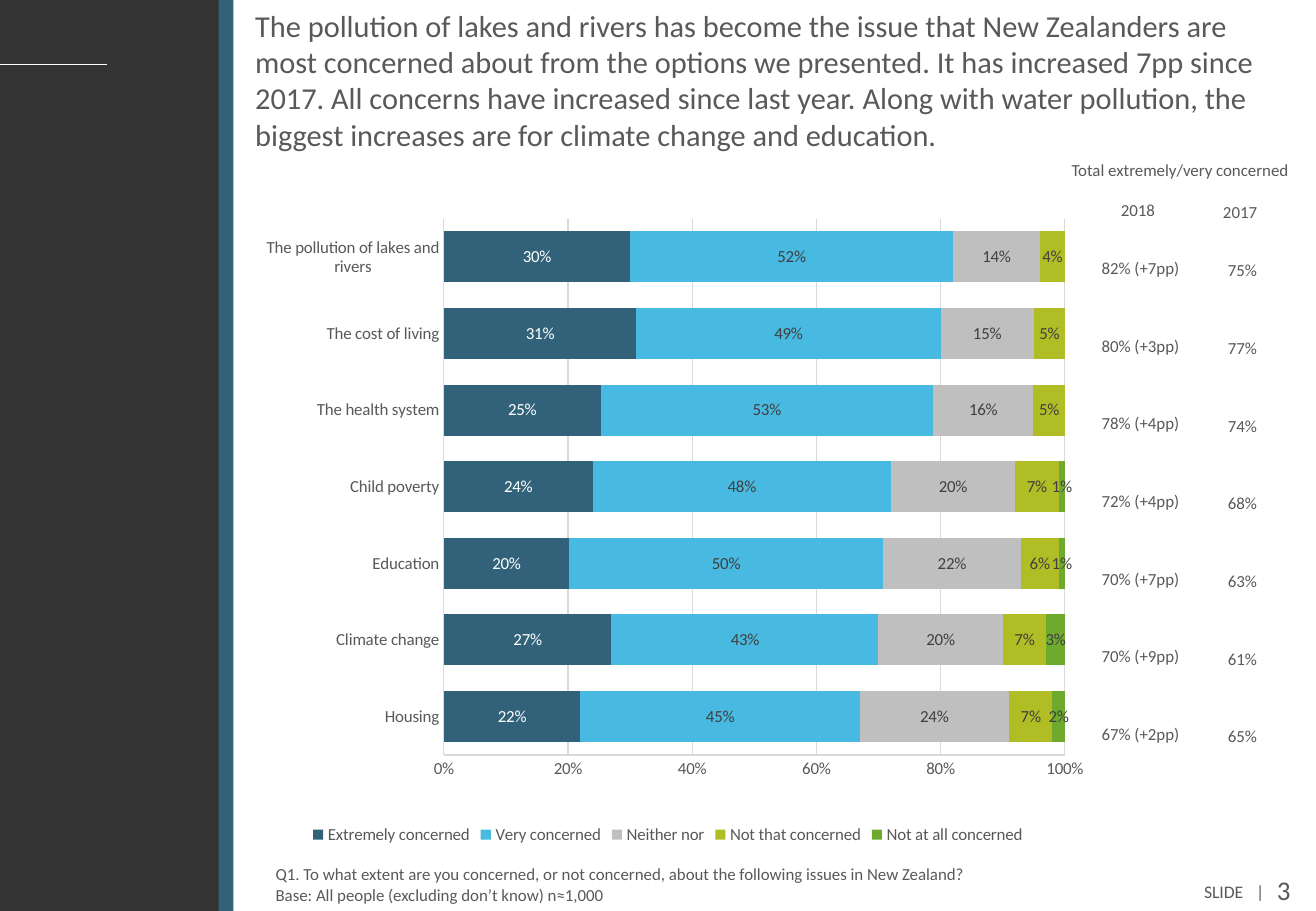
import pptx
import pptx.chart.data
import pptx.dml.color
import pptx.enum.chart
import pptx.enum.shapes
import pptx.enum.text
import pptx.util
from lxml import etree
from pptx.util import Inches

FONT = "Calibri"
GREY = "595959"
RULE = "D9D9D9"
BLUE = "326279"
ALIGN = pptx.enum.text.PP_ALIGN
ANCHOR = pptx.enum.text.MSO_ANCHOR
C = "{http://schemas.openxmlformats.org/drawingml/2006/chart}"
A = "{http://schemas.openxmlformats.org/drawingml/2006/main}"

ISSUES = [
    ("The pollution of lakes and rivers", (0.30, 0.52, 0.14, 0.04, None), "82% (+7pp)", "75%"),
    ("The cost of living", (0.31, 0.49, 0.15, 0.05, None), "80% (+3pp)", "77%"),
    ("The health system", (0.25, 0.53, 0.16, 0.05, None), "78% (+4pp)", "74%"),
    ("Child poverty", (0.24, 0.48, 0.20, 0.07, 0.01), "72% (+4pp)", "68%"),
    ("Education", (0.20, 0.50, 0.22, 0.06, 0.01), "70% (+7pp)", "63%"),
    ("Climate change", (0.27, 0.43, 0.20, 0.07, 0.03), "70% (+9pp)", "61%"),
    ("Housing", (0.22, 0.45, 0.24, 0.07, 0.02), "67% (+2pp)", "65%"),
]
LEVELS = [
    ("Extremely concerned", BLUE, "FFFFFF"),
    ("Very concerned", "48B9E1", "404040"),
    ("Neither nor", "BFBFBF", "404040"),
    ("Not that concerned", "B1BD25", "404040"),
    ("Not at all concerned", "6EAA2E", "404040"),
]


def rgb(value):
    return pptx.dml.color.RGBColor.from_string(value)


def style_font(font, size=10, color=GREY):
    font.name = FONT
    font.size = pptx.util.Pt(size)
    font.color.rgb = rgb(color)


def style_line(line, color):
    line.color.rgb = rgb(color)
    line.width = pptx.util.Pt(0.75)


def write(tf, text, size=10, color=GREY, align=ALIGN.LEFT, anchor=ANCHOR.TOP,
          spacing=None, tab=None):
    tf.word_wrap = True
    tf.auto_size = pptx.enum.text.MSO_AUTO_SIZE.NONE
    tf.vertical_anchor = anchor
    for i, line in enumerate(text.split("\n")):
        p = tf.add_paragraph() if i else tf.paragraphs[0]
        if tab:
            tabs = etree.SubElement(p._p.get_or_add_pPr(), A + "tabLst")
            etree.SubElement(tabs, A + "tab", pos=str(Inches(tab)), algn="l")
        p.alignment = align
        if spacing:
            p.line_spacing = pptx.util.Pt(spacing)
        r = p.add_run()
        r.text = line
        style_font(r.font, size, color)


def add_text(s, x, y, w, h, text, **fmt):
    sp = s.shapes.add_textbox(Inches(x), Inches(y), Inches(w), Inches(h))
    write(sp.text_frame, text, **fmt)


def add_block(s, x, y, w, h, color):
    sp = s.shapes.add_shape(pptx.enum.shapes.MSO_SHAPE.RECTANGLE,
                            Inches(x), Inches(y), Inches(w), Inches(h))
    sp.shadow.inherit = False
    sp.fill.solid()
    sp.fill.fore_color.rgb = rgb(color)
    sp.line.fill.background()


def add_sidebar(s, x, y, w, h):
    add_block(s, x, y, w - 0.11, h, "333333")
    add_block(s, x + w - 0.12, y, 0.12, h, BLUE)
    line = s.shapes.add_connector(pptx.enum.shapes.MSO_CONNECTOR.STRAIGHT,
                                  Inches(x), Inches(y + 0.53), Inches(x + 0.88), Inches(y + 0.53))
    style_line(line.line, "FFFFFF")
    etree.SubElement(line._element.spPr, A + "effectLst")


def add_title(s, x, y, w, h, text):
    sp = s.shapes.title
    sp.left, sp.top, sp.width, sp.height = map(Inches, (x, y, w, h))
    write(sp.text_frame, text, size=18, anchor=ANCHOR.MIDDLE)


def set_plot_area(chart, x, y, w, h):
    area = chart._chartSpace.find(f".//{C}plotArea")
    for old in area.findall(C + "layout"):
        area.remove(old)
    layout = etree.Element(C + "layout")
    manual = etree.SubElement(layout, C + "manualLayout")
    for tag, value in (("layoutTarget", "inner"), ("xMode", "edge"), ("yMode", "edge"),
                       ("x", x), ("y", y), ("w", w), ("h", h)):
        etree.SubElement(manual, C + tag, val=str(value))
    area.insert(0, layout)


def add_concern_chart(s, x, y, w, h):
    rows = ISSUES[::-1]
    data = pptx.chart.data.CategoryChartData(number_format="0%")
    data.categories = [row[0] for row in rows]
    for i, level in enumerate(LEVELS):
        data.add_series(level[0], [row[1][i] for row in rows])
    chart = s.shapes.add_chart(pptx.enum.chart.XL_CHART_TYPE.BAR_STACKED_100,
                               Inches(x), Inches(y), Inches(w), Inches(h), data).chart
    style_font(chart.font)
    chart.has_title = False
    chart.has_legend = True
    chart.legend.position = pptx.enum.chart.XL_LEGEND_POSITION.BOTTOM
    chart.legend.include_in_layout = False
    style_font(chart.legend.font)
    for axis in (chart.category_axis, chart.value_axis):
        axis.major_tick_mark = axis.minor_tick_mark = pptx.enum.chart.XL_TICK_MARK.NONE
        style_font(axis.tick_labels.font)
        style_line(axis.format.line, RULE)
    axis = chart.value_axis
    axis.minimum_scale, axis.maximum_scale, axis.major_unit = 0, 1, 0.2
    axis.tick_labels.number_format = "0%"
    axis.tick_labels.number_format_is_linked = False
    axis.has_major_gridlines = True
    style_line(axis.major_gridlines.format.line, RULE)
    plot = chart.plots[0]
    plot.gap_width, plot.overlap, plot.vary_by_categories = 50, 100, False
    for series, (_, color, label_color) in zip(plot.series, LEVELS):
        series.format.fill.solid()
        series.format.fill.fore_color.rgb = rgb(color)
        labels = series.data_labels
        labels.show_value = True
        labels.number_format = "0%"
        labels.number_format_is_linked = False
        style_font(labels.font, color=label_color)
    set_plot_area(chart, 0.238, 0.028, 0.727, 0.827)


def add_totals(s, x, y, w):
    centred = dict(align=ALIGN.CENTER, anchor=ANCHOR.MIDDLE)
    add_text(s, x, y, w, 0.27, "Total extremely/very concerned", **centred)
    for year, column, dx, dy in (("2018", 2, 0.24, 0.34), ("2017", 3, 1.08, 0.36)):
        add_text(s, x + dx + 0.08, y + dy - 0.01, 0.93, 0.27, year, **centred)
        add_text(s, x + dx, y + dy, 1.13, 4.59, "\n".join(row[column] for row in ISSUES),
                 align=ALIGN.CENTER, spacing=46)


def add_footer(s, x, y, w, h):
    add_text(s, x, y, w, h,
             "Q1. To what extent are you concerned, or not concerned, about the following issues in New Zealand?\n"
             "Base: All people (excluding don’t know) n≈1,000", anchor=ANCHOR.MIDDLE)
    add_text(s, x + 7.64, y + 0.14, 0.75, 0.28, "SLIDE\t|", size=10.5, tab=0.43)
    add_text(s, x + 8.24, y + 0.08, 0.35, 0.37, "3", size=16)


def main():
    prs = pptx.Presentation()
    prs.slide_width, prs.slide_height = Inches(10.83), Inches(7.5)
    s = prs.slides.add_slide(prs.slide_layouts[5])
    add_sidebar(s, 0, 0, 1.92, 7.5)
    add_title(s, 2, 0, 8.5, 1.31,
              "The pollution of lakes and rivers has become the issue that New Zealanders are most "
              "concerned about from the options we presented. It has increased 7pp since 2017. All "
              "concerns have increased since last year. Along with water pollution, the biggest "
              "increases are for climate change and education.")
    add_concern_chart(s, 1.98, 1.65, 7.03, 5.34)
    add_totals(s, 8.58, 1.26, 2.26)
    add_footer(s, 2.17, 7.06, 7.5, 0.44)
    prs.save("out.pptx")


if __name__ == "__main__":
    main()
